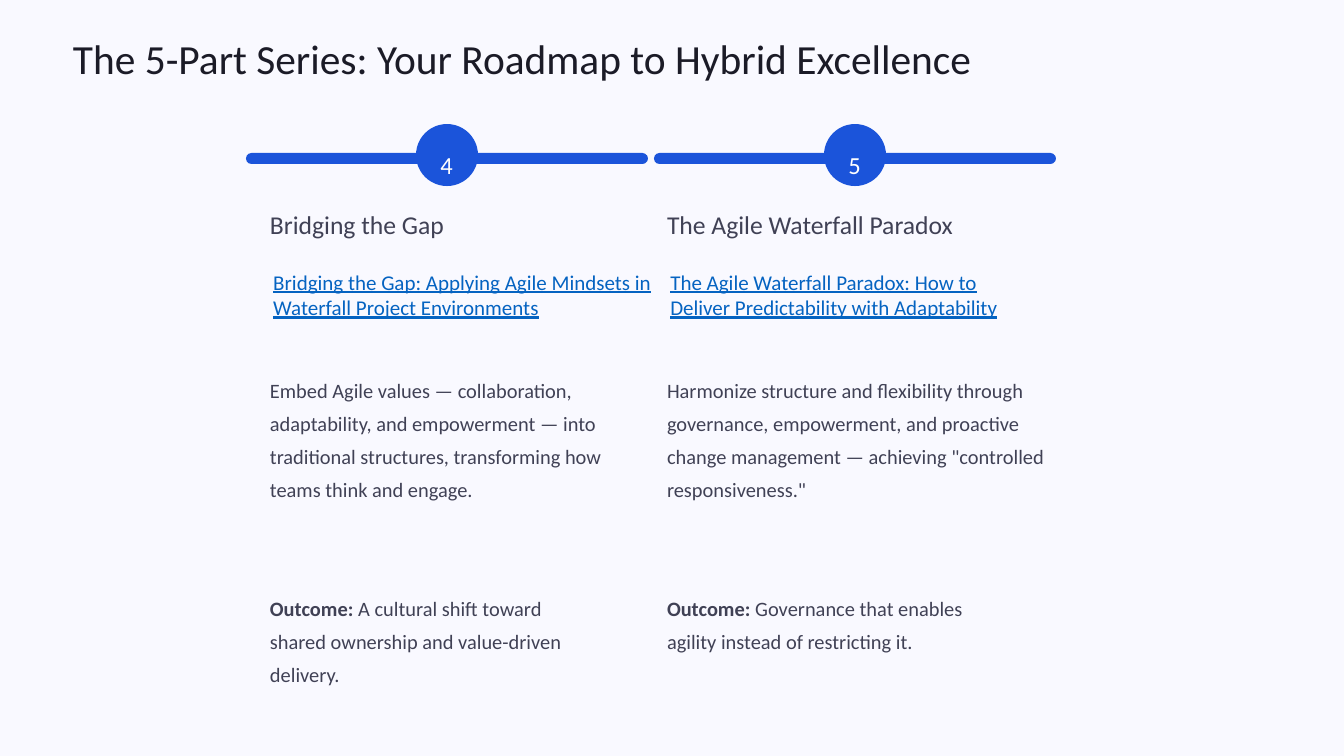
from pptx import Presentation
from pptx.dml.color import RGBColor
from pptx.enum.shapes import MSO_SHAPE as Preset
from pptx.enum.text import MSO_ANCHOR as Anchor, MSO_AUTO_SIZE as AutoSize, PP_ALIGN as Align
from pptx.util import Emu, Pt

COLOURS = {"page": "F9F9FF", "title": "1B1B27", "body": "404155",
           "accent": "1B54DA", "number": "FFFFFF", "link": "0563C1"}
STAGE_PITCH = 408
TEXT_PITCH = 397
STAGES = [
    {"number": "4", "heading": "Bridging the Gap",
     "article": "Bridging the Gap: Applying Agile Mindsets in Waterfall Project Environments",
     "summary": "Embed Agile values — collaboration, adaptability, and empowerment — into "
                "traditional structures, transforming how teams think and engage.",
     "outcome": " A cultural shift toward shared ownership and value-driven delivery.",
     "widths": (260, 396, 361, 319)},
    {"number": "5", "heading": "The Agile Waterfall Paradox",
     "article": "The Agile Waterfall Paradox: How to Deliver Predictability with Adaptability",
     "summary": "Harmonize structure and flexibility through governance, empowerment, and "
                "proactive change management — achieving \"controlled responsiveness.\"",
     "outcome": " Governance that enables agility instead of restricting it.",
     "widths": (355, 381, 390, 306)},
]


def px(length):
    """Turn pixels into EMU."""
    return Emu(round(length * 914400 / 84))


class RoadmapSlide:
    """Hold the style and the slide on which elements are placed."""

    def __init__(self, deck, font="Calibri"):
        self.font = font
        self.slide = deck.slides.add_slide(deck.slide_layouts[5])
        self.paint(self.slide.background.fill, "page")

    def paint(self, fill, colour):
        fill.solid()
        fill.fore_color.rgb = RGBColor.from_string(COLOURS[colour])

    def typeset(self, frame, runs, size, colour, spacing=None, align=Align.LEFT,
                wrap=True, inset=0, underline=False):
        layout = {"word_wrap": wrap, "vertical_anchor": Anchor.TOP, "auto_size": AutoSize.NONE}
        if inset is not None:
            layout.update({f"margin_{side}": px(inset) for side in ("left", "top", "right", "bottom")})
        for name, value in layout.items():
            setattr(frame, name, value)
        paragraph = frame.paragraphs[0]
        paragraph.alignment = align
        if spacing:
            paragraph.line_spacing = Pt(spacing)
        for words, bold in runs:
            run = paragraph.add_run()
            run.text = words
            style = {"name": self.font, "size": Pt(size), "bold": bold, "underline": underline}
            for name, value in style.items():
                setattr(run.font, name, value)
            run.font.color.rgb = RGBColor.from_string(COLOURS[colour])

    def title(self, words, box):
        heading = self.slide.shapes.title
        for name, value in zip(("left", "top", "width", "height"), box):
            setattr(heading, name, px(value))
        self.typeset(heading.text_frame, [(words, False)], 35.5, "title", 44.5, wrap=False)

    def text(self, runs, box, size, colour, **layout):
        frame = self.slide.shapes.add_textbox(*map(px, box)).text_frame
        self.typeset(frame, runs, size, colour, **layout)
        return frame

    def link(self, words, box):
        frame = self.text([(words, False)], box, 18, "link", inset=None, underline=True)
        frame.auto_size = AutoSize.SHAPE_TO_FIT_TEXT

    def pill(self, box):
        pill = self.slide.shapes.add_shape(Preset.ROUNDED_RECTANGLE, *map(px, box))
        pill.adjustments[0] = 0.5
        pill.shadow.inherit = False
        self.paint(pill.fill, "accent")
        pill.line.fill.background()

    def stage(self, index, stage):
        bar = 246 + index * STAGE_PITCH
        left = 270 + index * TEXT_PITCH
        heading, article, summary, outcome = stage["widths"]
        self.pill((bar, 153, 402, 11))
        self.pill((bar + 170, 124, 62, 62))
        self.text([(stage["number"], False)], (bar + 188, 140, 25, 31), 21, "number",
                  spacing=34, align=Align.CENTER, wrap=False)
        self.text([(stage["heading"], False)], (left, 208, heading, 33), 22, "body",
                  spacing=27.5, wrap=False)
        self.link(stage["article"], (left - 5, 265, article, 60))
        self.text([(stage["summary"], False)], (left, 369, summary, 209), 17.5, "body",
                  spacing=28.5)
        self.text([("Outcome:", True), (stage["outcome"], False)], (left, 587, outcome, 66),
                  17.5, "body", spacing=28.5)


def main():
    deck = Presentation()
    deck.slide_width, deck.slide_height = px(1344), px(756)
    roadmap = RoadmapSlide(deck)
    roadmap.title("The 5-Part Series: Your Roadmap to Hybrid Excellence", (73, 31, 1114, 52))
    for index, stage in enumerate(STAGES):
        roadmap.stage(index, stage)
    deck.save("out.pptx")


if __name__ == "__main__":
    main()
